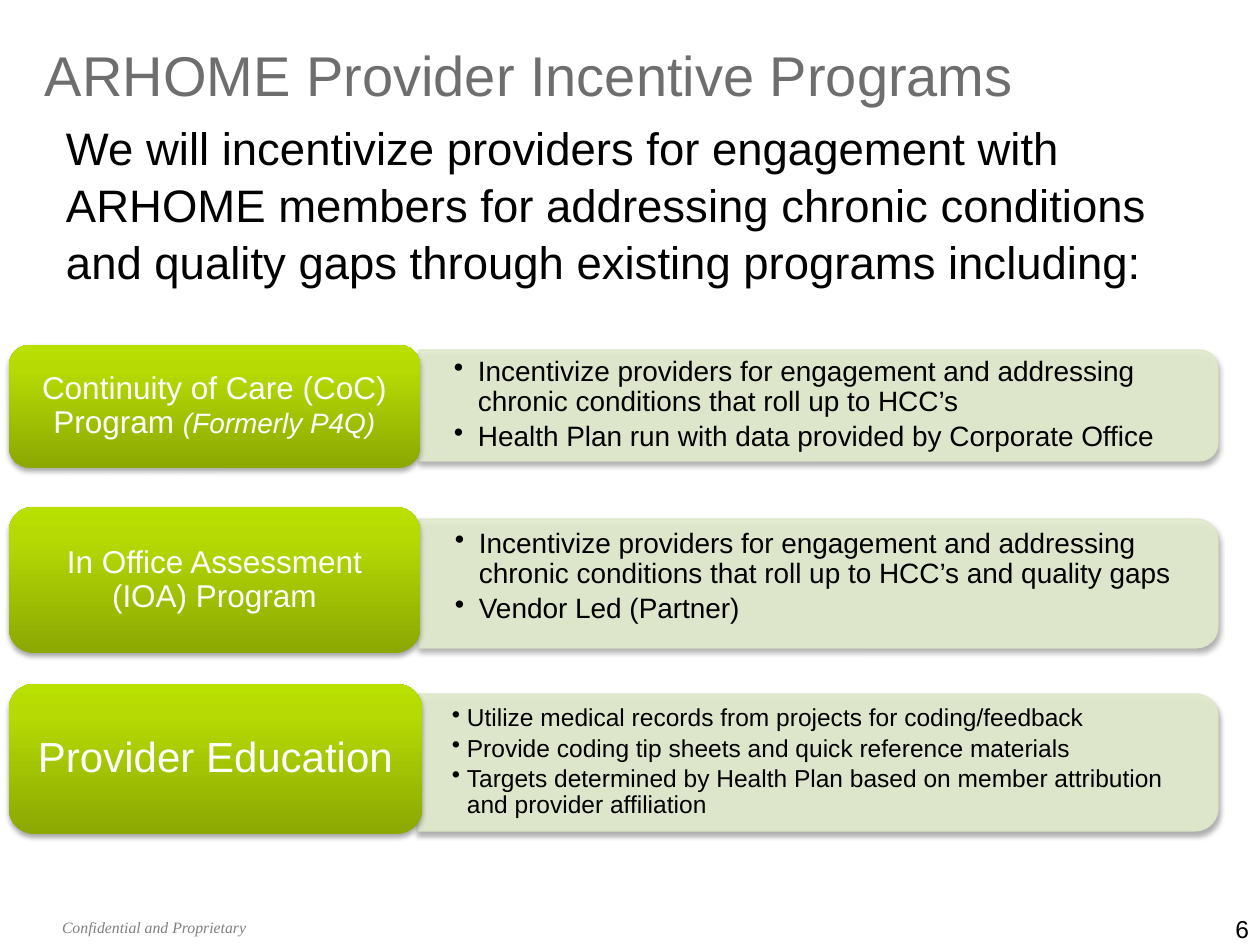
from copy import deepcopy

from pptx import Presentation
from pptx.dml.color import RGBColor
from pptx.enum.shapes import MSO_SHAPE
from pptx.enum.text import MSO_ANCHOR, PP_ALIGN
from pptx.oxml import parse_xml
from pptx.oxml.ns import nsdecls, qn
from pptx.util import Emu, Pt

BLACK = RGBColor(0x00, 0x00, 0x00)
WHITE = RGBColor(0xFF, 0xFF, 0xFF)
TITLE_GREY = RGBColor(0x6E, 0x6E, 0x6E)
FOOTER_GREY = RGBColor(0x80, 0x80, 0x80)
PANEL_FILL = RGBColor(0xE2, 0xEB, 0xCD)
PANEL_LINE = RGBColor(0xDD, 0xE7, 0xC8)
LABEL_STOPS = [
    (0, RGBColor(0x8B, 0xA8, 0x03)),
    (0.8, RGBColor(0xB5, 0xDA, 0x04)),
    (1, RGBColor(0xB8, 0xE0, 0x00)),
]

PX_PER_INCH = 126
LABEL_LEFT = 9

# label box (top, width, height), label spans (text, size, italic),
# panel box (left, top, width, height), bullet box (left, top, height),
# bullet size, bullet indent, bullets
PROGRAMS = [
    ((345, 411, 123),
     [("Continuity of Care (CoC) Program ", 18, False), ("(Formerly P4Q)", 16, True)],
     (419, 350, 799, 111), (420, 355, 100), 16, 24,
     ["Incentivize providers for engagement and addressing chronic conditions "
      "that roll up to HCC’s",
      "Health Plan run with data provided by Corporate Office"]),
    ((507, 411, 146),
     [("In Office Assessment (IOA) Program", 18, False)],
     (419, 519, 799, 129), (421, 519, 116), 16, 24,
     ["Incentivize providers for engagement and addressing chronic conditions "
      "that roll up to HCC’s and quality gaps",
      "Vendor Led (Partner)"]),
    ((684, 413, 150),
     [("Provider Education", 24, False)],
     (418, 694, 800, 137), (418, 701, 123), 14, 15,
     ["Utilize medical records from projects for coding/feedback",
      "Provide coding tip sheets and quick reference materials",
      "Targets determined by Health Plan based on member attribution "
      "and provider affiliation"]),
]


def px(count):
    return Emu(round(count * 914400 / PX_PER_INCH))


class SlideBuilder:
    font_name = "Arial"

    def __init__(self, page):
        self.page = page

    def style(self, font, size, color, name=None, italic=None):
        font.name = name or self.font_name
        font.size = Pt(size)
        font.color.rgb = color
        font.italic = italic

    def frame(self, shape, side, end, anchor):
        """Prepare a text frame with the given side and top/bottom insets."""
        frame = shape.text_frame
        frame.word_wrap = True
        frame.margin_left = frame.margin_right = px(side)
        frame.margin_top = frame.margin_bottom = px(end)
        frame.vertical_anchor = anchor
        return frame

    def text(self, box, words, size, color, side=0, end=0, anchor=MSO_ANCHOR.MIDDLE,
             align=PP_ALIGN.LEFT, spacing=None, name=None, italic=None):
        shape = self.page.shapes.add_textbox(*map(px, box))
        para = self.frame(shape, side, end, anchor).paragraphs[0]
        para.text = words
        para.alignment = align
        para.line_spacing = spacing
        self.style(para.font, size, color, name, italic)

    def add_shadow(self, shape):
        shape.shadow.inherit = False
        shape._element.spPr.find(qn("a:effectLst")).append(parse_xml(
            f'<a:outerShdw {nsdecls("a")} blurRad="{Pt(3.1)}" dist="{Pt(1.8)}" '
            'dir="5400000" rotWithShape="0"><a:srgbClr val="000000">'
            '<a:alpha val="35000"/></a:srgbClr></a:outerShdw>'))

    def panel(self, left, top, width, height):
        """Draw a pale bar rounded on its right, as a quarter-turned shape."""
        turned = (left + (width - height) / 2, top + (height - width) / 2, height, width)
        shape = self.page.shapes.add_shape(MSO_SHAPE.ROUND_2_SAME_RECTANGLE, *map(px, turned))
        shape.rotation = 90
        shape.fill.solid()
        shape.fill.fore_color.rgb = PANEL_FILL
        shape.line.color.rgb = PANEL_LINE
        shape.line.width = Pt(0.75)
        for color in shape._element.spPr.iter(qn("a:srgbClr")):
            color.append(parse_xml(f'<a:alpha {nsdecls("a")} val="90000"/>'))
        self.add_shadow(shape)

    def label(self, box, spans):
        shape = self.page.shapes.add_shape(MSO_SHAPE.ROUNDED_RECTANGLE, *map(px, box))
        shape.fill.gradient()
        shape.fill.gradient_angle = 90
        stop_list = shape._element.spPr.find(".//" + qn("a:gsLst"))
        stop_list.append(deepcopy(stop_list[0]))
        for stop, (position, color) in zip(shape.fill.gradient_stops, LABEL_STOPS):
            stop.position = position
            stop.color.rgb = color
        shape.line.fill.background()
        self.add_shadow(shape)
        para = self.frame(shape, 9, 5, MSO_ANCHOR.MIDDLE).paragraphs[0]
        para.alignment = PP_ALIGN.CENTER
        para.line_spacing = 0.9
        for words, size, italic in spans:
            span = para.add_run()
            span.text = words
            self.style(span.font, size, WHITE, italic=italic)

    def bullets(self, box, items, size, indent):
        shape = self.page.shapes.add_textbox(*map(px, box))
        frame = self.frame(shape, 34, 18, MSO_ANCHOR.MIDDLE)
        for index, item in enumerate(items):
            para = frame.add_paragraph() if index else frame.paragraphs[0]
            para.text = item
            para.line_spacing = 0.9
            para.space_after = Pt(round(size * 0.15, 1))
            properties = para._p.get_or_add_pPr()
            properties.set("marL", str(px(indent)))
            properties.set("indent", str(-px(indent)))
            properties.append(parse_xml(f'<a:buChar {nsdecls("a")} char="•"/>'))
            self.style(para.font, size, BLACK)


def main():
    deck = Presentation()
    deck.slide_width, deck.slide_height = px(1260), px(945)
    builder = SlideBuilder(deck.slides.add_slide(deck.slide_layouts[6]))

    builder.text((53, 112, 1125, 185),
                 "We will incentivize providers for engagement with ARHOME members for "
                 "addressing chronic conditions and quality gaps through existing "
                 "programs including:",
                 26, BLACK, side=13, end=6, anchor=MSO_ANCHOR.TOP, spacing=1.04)
    builder.text((32, 32, 998, 84), "ARHOME Provider Incentive Programs",
                 32, TITLE_GREY, side=13, end=6)
    builder.text((62, 915, 449, 25), "Confidential and Proprietary",
                 9, FOOTER_GREY, name="Times New Roman", italic=True)

    for label_box, spans, panel_box, bullet_box, size, indent, items in PROGRAMS:
        builder.panel(*panel_box)
        left, top, height = bullet_box
        builder.bullets((left, top, 793, height), items, size, indent)
        builder.label((LABEL_LEFT, *label_box), spans)

    builder.text((955, 912, 294, 33), "6", 14, BLACK, align=PP_ALIGN.RIGHT)
    deck.save("out.pptx")


if __name__ == "__main__":
    main()
